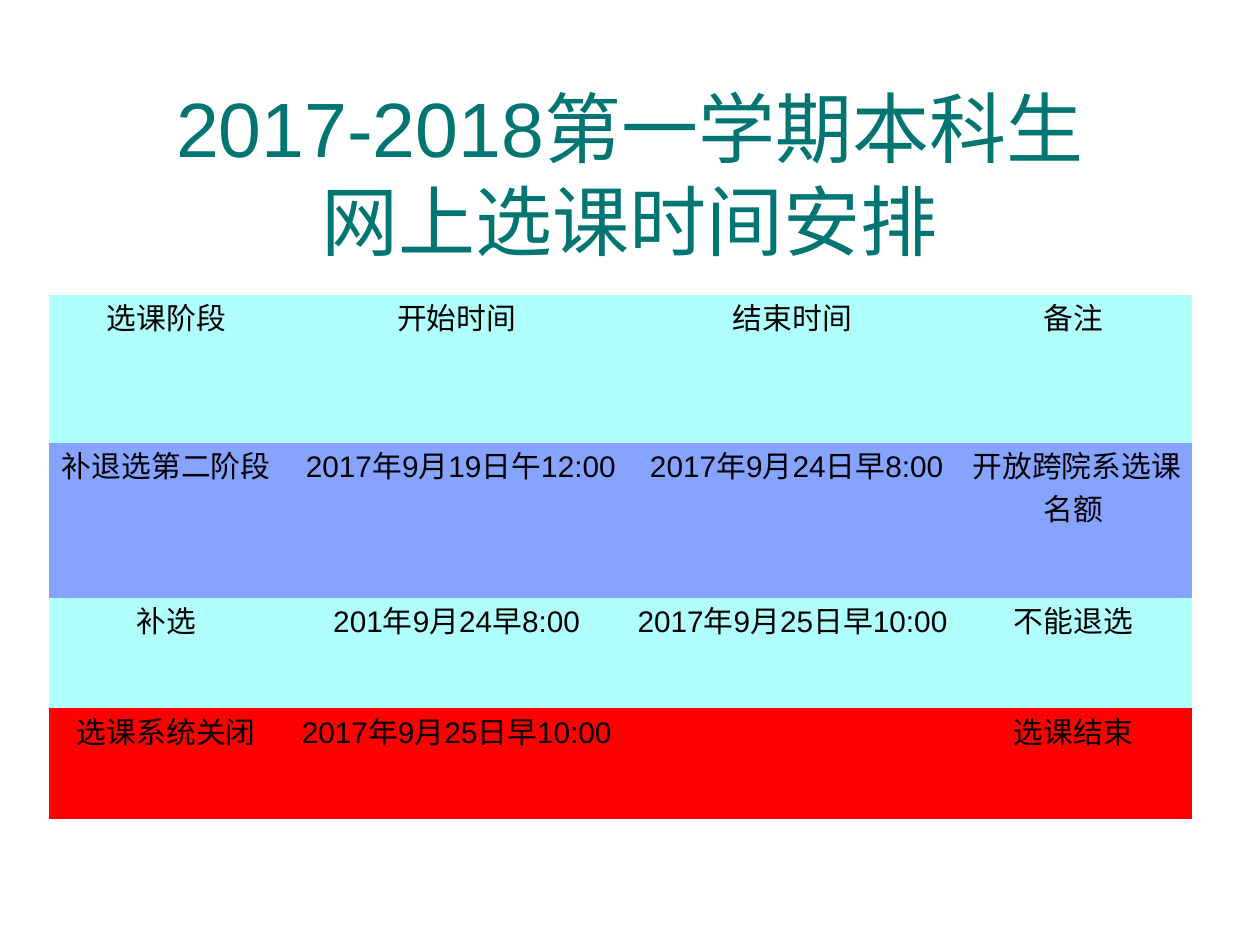
from pptx import Presentation
from pptx.dml.color import RGBColor
from pptx.enum.text import MSO_ANCHOR, PP_ALIGN
from pptx.oxml.ns import qn
from pptx.util import Pt

CENTER = PP_ALIGN.CENTER
MIDDLE = MSO_ANCHOR.MIDDLE
FONT = "Arial"
PLAIN_TABLE_STYLE = "{2D5ABB26-0587-4C30-8999-92F81FD0307C}"
COLORS = {
    "title": "007572",
    "text": "000000",
    "aqua": "B0FFFD",
    "blue": "85A3FF",
    "red": "FF0000",
}

TITLE = "2017-2018第一学期本科生\v网上选课时间安排"
COLUMN_WIDTHS = [133.9, 198, 185.8, 135.4]
# Row height, fill, cell texts
SCHEDULE = [
    (84.5, "aqua", ["选课阶段", "开始时间", "结束时间", "备注"]),
    (88.5, "blue", ["补退选第二阶段", " 2017年9月19日午12:00",
                    " 2017年9月24日早8:00", " 开放跨院系选课名额"]),
    (63.3, "aqua", ["补选", "201年9月24早8:00", "2017年9月25日早10:00", "不能退选"]),
    (63.3, "red", ["选课系统关闭", "2017年9月25日早10:00", "", "选课结束"]),
]


def rgb(name):
    return RGBColor.from_string(COLORS[name])


def write_centered(paragraph, text, size, color):
    paragraph.text = text
    paragraph.alignment = CENTER
    paragraph.font.name = FONT
    paragraph.font.size = Pt(size)
    paragraph.font.color.rgb = rgb(color)


def add_title(slide, left, top, width, height):
    box = slide.shapes.add_textbox(Pt(left), Pt(top), Pt(width), Pt(height))
    frame = box.text_frame
    frame.word_wrap = True
    frame.vertical_anchor = MIDDLE
    write_centered(frame.paragraphs[0], TITLE, 44, "title")


def add_schedule(slide, left, top):
    width = sum(COLUMN_WIDTHS)
    height = sum(row_height for row_height, _, _ in SCHEDULE)
    table = slide.shapes.add_table(
        len(SCHEDULE), len(COLUMN_WIDTHS), Pt(left), Pt(top), Pt(width), Pt(height)
    ).table
    table.first_row = False
    table.horz_banding = False
    table._tbl.tblPr.find(qn("a:tableStyleId")).text = PLAIN_TABLE_STYLE

    for column, column_width in zip(table.columns, COLUMN_WIDTHS):
        column.width = Pt(column_width)
    for row, (row_height, fill, texts) in zip(table.rows, SCHEDULE):
        row.height = Pt(row_height)
        for cell, text in zip(row.cells, texts):
            cell.fill.solid()
            cell.fill.fore_color.rgb = rgb(fill)
            cell.margin_left = cell.margin_right = Pt(0)
            cell.margin_top = cell.margin_bottom = Pt(0)
            write_centered(cell.text_frame.paragraphs[0], text, 17, "text")


def main():
    presentation = Presentation()
    presentation.slide_width = Pt(720)
    presentation.slide_height = Pt(540)
    slide = presentation.slides.add_slide(presentation.slide_layouts[6])
    add_title(slide, 23.8, 54, 672.5, 90)
    add_schedule(slide, 28.1, 168.5)
    presentation.save("out.pptx")


if __name__ == "__main__":
    main()
